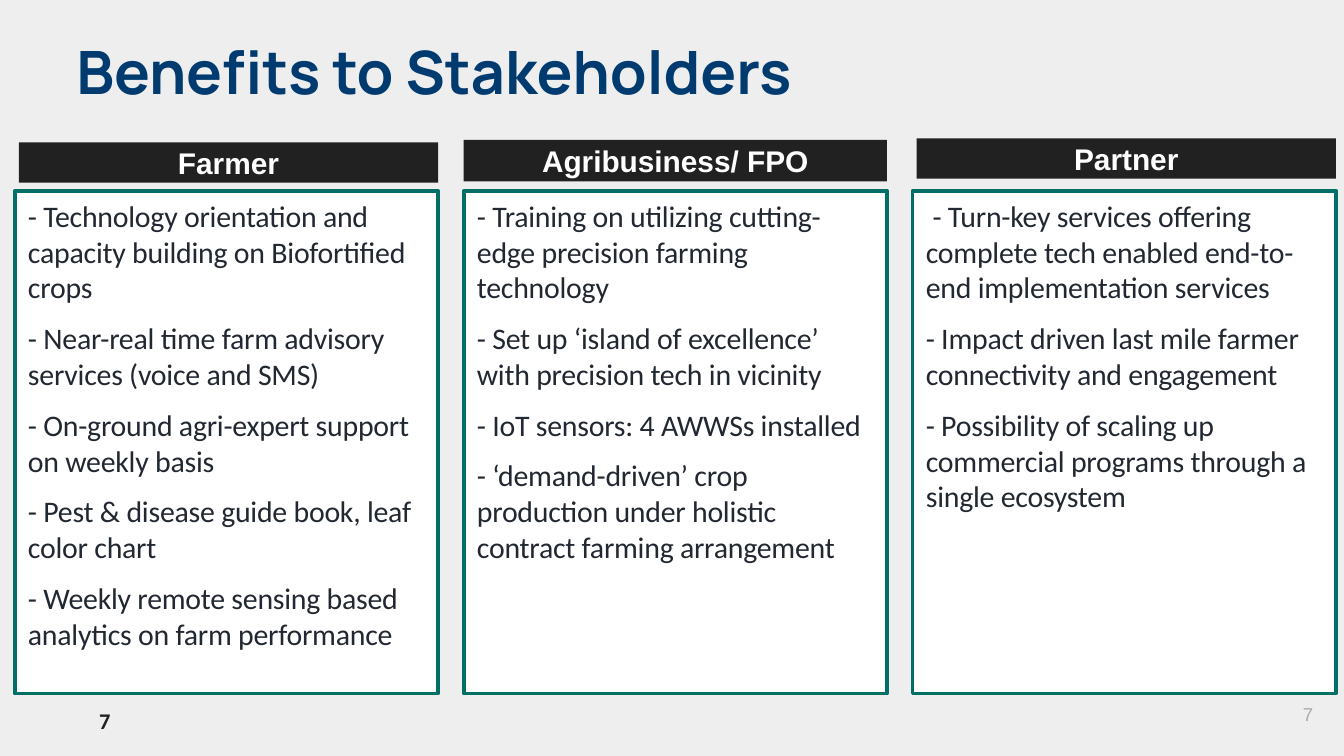
from dataclasses import dataclass

from pptx import Presentation
from pptx.dml.color import RGBColor
from pptx.enum.shapes import MSO_SHAPE
from pptx.enum.text import MSO_ANCHOR, PP_ALIGN
from pptx.util import Inches, Pt


@dataclass(frozen=True)
class Theme:
    back: str = "EEEEEE"
    navy: str = "003B70"
    teal: str = "006F65"
    dark: str = "212121"
    ink: str = "222831"
    white: str = "FFFFFF"
    grey: str = "ADADAD"
    title: int = 32
    body: int = 16
    page: int = 12
    small: int = 10
    brand: str = "Manrope"
    sans: str = "Arial"
    text: str = "Calibri"


THEME = Theme()

# Heading, heading box relative to its column (left, top, width, height),
# indent of the first line, points
COLUMNS = [
    ("Farmer", (0.03, 0.03, 3.12, 0.3), 0, [
        "- Technology orientation and capacity building on Biofortified crops",
        "- Near-real time farm advisory services (voice and SMS)",
        "- On-ground agri-expert support on weekly basis",
        "- Pest & disease guide book, leaf color chart",
        "- Weekly remote sensing based analytics on farm performance",
    ]),
    ("Agribusiness/ FPO", (0, 0.01, 3.15, 0.31), 0, [
        "- Training on utilizing cutting-edge precision farming technology",
        "- Set up ‘island of excellence’ with precision tech in vicinity",
        "- IoT sensors: 4 AWWSs installed",
        "- ‘demand-driven’ crop production under holistic contract farming arrangement",
    ]),
    ("Partner", (0.03, 0, 3.12, 0.3), 0.05, [
        "- Turn-key services offering complete tech enabled end-to-end implementation services",
        "- Impact driven last mile farmer connectivity and engagement",
        "- Possibility of scaling up commercial programs through a single ecosystem",
    ]),
]


def rgb(code):
    return RGBColor.from_string(code)


def write(shape, lines, size, font, color, bold=False, align=PP_ALIGN.LEFT,
          anchor=MSO_ANCHOR.TOP, inset=(0.1, 0.05), gap=0, indent=0, track=0):
    """Fill a shape with one paragraph per line of text."""
    frame = shape.text_frame
    frame.word_wrap = True
    frame.vertical_anchor = anchor
    frame.margin_left = frame.margin_right = Inches(inset[0])
    frame.margin_top = frame.margin_bottom = Inches(inset[1])
    for i, line in enumerate(lines):
        para = frame.add_paragraph() if i else frame.paragraphs[0]
        para.alignment = align
        if gap:
            para.space_after = Pt(gap)
            if i:
                para.space_before = Pt(gap)
        if indent and i == 0:
            para._p.get_or_add_pPr().set("indent", str(Inches(indent)))
        run = para.add_run()
        run.text = line
        run.font.size = Pt(size)
        run.font.name = font
        run.font.bold = bold
        run.font.color.rgb = rgb(color)
        if track:
            run.font._element.set("spc", str(track))


def label(slide, box, text, **style):
    """Place a plain line of text."""
    shape = slide.shapes.add_textbox(*map(Inches, box))
    write(shape, [text], **style)


def panel(slide, box, fill, line=None):
    """Place a filled rectangle, with an outline if a colour is given."""
    shape = slide.shapes.add_shape(MSO_SHAPE.RECTANGLE, *map(Inches, box))
    shape.shadow.inherit = False
    shape.fill.solid()
    shape.fill.fore_color.rgb = rgb(fill)
    if line:
        shape.line.color.rgb = rgb(line)
        shape.line.width = Pt(2)
    else:
        shape.line.fill.background()
    return shape


def column(slide, box, name, head, indent, points):
    """Place a heading bar above a framed list."""
    left, top, width, height = box
    drop = 0.39
    body = panel(slide, (left, top + drop, width, height - drop),
                 THEME.white, THEME.teal)
    write(body, points, THEME.body, THEME.text, THEME.ink,
          gap=4, indent=indent, track=-10)
    bar = panel(slide, (left + head[0], top + head[1], head[2], head[3]),
                THEME.dark)
    write(bar, [name], THEME.body, THEME.sans, THEME.white, bold=True,
          align=PP_ALIGN.CENTER, anchor=MSO_ANCHOR.MIDDLE)


def footer(slide, box):
    """Place the page number at both ends of the foot."""
    left, top, width, height = box
    side = {"align": PP_ALIGN.RIGHT, "anchor": MSO_ANCHOR.MIDDLE}
    label(slide, (left + width - 0.6, top, 0.6, height), "7",
          size=THEME.small, font=THEME.sans, color=THEME.grey,
          inset=(0.1, 0.1), **side)
    label(slide, (left, top + 0.09, 0.39, height - 0.09), "7",
          size=THEME.page, font=THEME.text, color=THEME.dark,
          bold=True, **side)


def main():
    # Widescreen, 16 to 9
    deck = Presentation()
    deck.slide_width = Inches(10)
    deck.slide_height = Inches(10) * 9 // 16
    slide = deck.slides.add_slide(deck.slide_layouts[6])
    slide.background.fill.solid()
    slide.background.fill.fore_color.rgb = rgb(THEME.back)

    # Title
    label(slide, (0.47, 0.16, 9.32, 0.63), "Benefits to Stakeholders",
          size=THEME.title, font=THEME.brand, color=THEME.navy,
          bold=True, inset=(0.1, 0.1))

    # Stakeholder columns
    left, pitch = 0.11, 3.34
    for i, data in enumerate(COLUMNS):
        column(slide, (left + i * pitch, 1.03, 3.15, 4.13), *data)

    # Page numbers
    footer(slide, (0.53, 5.1, 9.34, 0.43))
    deck.save("out.pptx")


if __name__ == "__main__":
    main()
